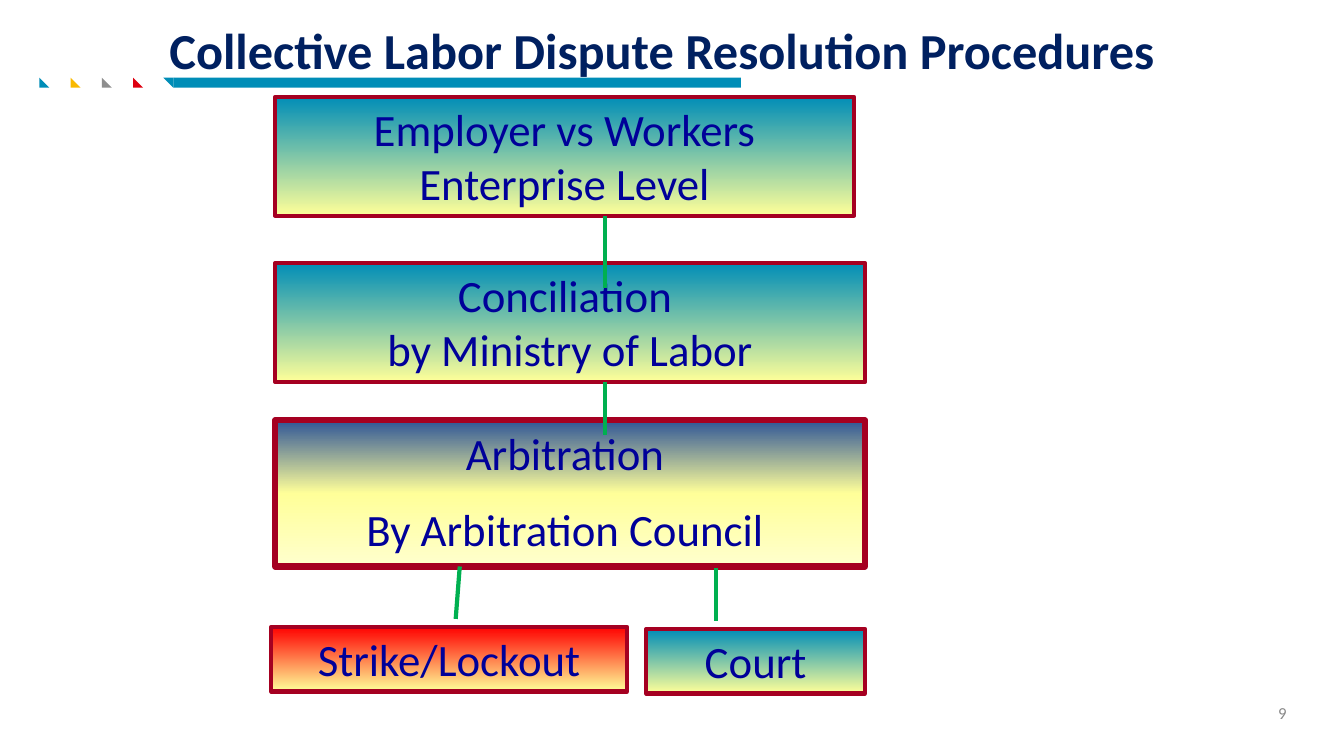
from copy import deepcopy

from lxml.etree import SubElement
from pptx import Presentation
from pptx.dml.color import RGBColor
from pptx.enum.shapes import MSO_CONNECTOR as Conn, MSO_SHAPE as Kind
from pptx.enum.text import MSO_ANCHOR as Anchor, MSO_AUTO_SIZE as Fit, PP_ALIGN as Align
from pptx.oxml.ns import qn
from pptx.util import Inches, Pt

TEAL = RGBColor(0x00, 0x8D, 0xB7)
GOLD = RGBColor(0xF9, 0xB9, 0x00)
GRAY = RGBColor(0x8E, 0x8E, 0x8E)
RED = RGBColor(0xDE, 0x00, 0x10)
NAVY = RGBColor(0x00, 0x20, 0x60)
PALE = RGBColor(0x89, 0x89, 0x89)
INK = RGBColor(0x00, 0x00, 0x99)
EDGE = RGBColor(0xA5, 0x00, 0x21)
GREEN = RGBColor(0x00, 0xB0, 0x50)
BLUE = RGBColor(0x2F, 0x55, 0x97)
LEMON = RGBColor(0xFF, 0xFF, 0x99)
CREAM = RGBColor(0xFF, 0xFF, 0xCD)
FLAME = RGBColor(0xFF, 0x00, 0x00)

FONT = "Calibri"
HEAD = {"name": FONT, "size": Pt(36), "bold": True}
BODY = {"name": FONT, "size": Pt(32)}
NOTE = {"name": FONT, "size": Pt(12)}


def apply(item, form):
    for key, value in form.items():
        setattr(item, key, value)


def write(frame, lines, form, color, align, gap=0):
    frame.text = "\n".join(lines)
    for i, para in enumerate(frame.paragraphs):
        apply(para, {"alignment": align, "space_before": Pt(gap if i else 0)})
        apply(para.font, form)
        para.font.color.rgb = color


def add_mark(slide, kind, left, width, color):
    mark = slide.shapes.add_shape(
        kind, Inches(left), Inches(0.77), Inches(width), Inches(0.1))
    mark.shadow.inherit = False
    mark.fill.solid()
    mark.fill.fore_color.rgb = color
    mark.line.fill.background()
    return mark


def add_line(slide, start, end, color, width):
    line = slide.shapes.add_connector(
        Conn.STRAIGHT, *(Inches(n) for n in (*start, *end)))
    line.line.color.rgb = color
    line.line.width = Pt(width)
    SubElement(line._element.spPr, qn("a:effectLst"))


def add_band(slide):
    for i, color in enumerate((TEAL, GOLD, GRAY, RED)):
        add_mark(slide, Kind.RIGHT_TRIANGLE, 0.39 + i * 0.31, 0.1, color)
    add_mark(slide, Kind.RECTANGLE, 1.72, 5.63, TEAL)
    add_mark(slide, Kind.RIGHT_TRIANGLE, 1.62, 0.1, TEAL).rotation = 180
    add_line(slide, (1.73, 0.77), (1.73, 0.86), TEAL, 0.5)


def shade(shape, colors):
    fill = shape.fill
    fill.gradient()
    fill.gradient_angle = 270
    stops = shape._element.spPr.find(".//" + qn("a:gsLst"))
    while len(stops) < len(colors):
        stops.append(deepcopy(stops[-1]))
    for i, (stop, color) in enumerate(zip(fill.gradient_stops, colors)):
        stop.position = i / (len(colors) - 1)
        stop.color.rgb = color


def add_step(slide, area, lines, colors=(TEAL, LEMON), edge=3, gap=0):
    step = slide.shapes.add_shape(Kind.RECTANGLE, *map(Inches, area))
    step.shadow.inherit = False
    shade(step, colors)
    step.line.color.rgb = EDGE
    step.line.width = Pt(edge)
    apply(step.text_frame, {"word_wrap": True, "vertical_anchor": Anchor.TOP,
                            "auto_size": Fit.SHAPE_TO_FIT_TEXT})
    write(step.text_frame, lines, BODY, INK, Align.CENTER, gap)


def add_title(slide, text):
    title = slide.shapes.title
    apply(title, {"left": Inches(1.58), "top": Inches(-0.14),
                  "width": Inches(10.35), "height": Inches(1.25)})
    apply(title.text_frame, {"word_wrap": True, "vertical_anchor": Anchor.MIDDLE,
                             "auto_size": Fit.NONE})
    write(title.text_frame, [text], HEAD, NAVY, Align.LEFT)


def add_page(slide, text):
    page = slide.shapes.add_textbox(
        Inches(10.53), Inches(6.87), Inches(2.33), Inches(0.4))
    apply(page.text_frame, {"word_wrap": True, "vertical_anchor": Anchor.MIDDLE})
    write(page.text_frame, [text], NOTE, PALE, Align.RIGHT)


def main():
    deck = Presentation()
    apply(deck, {"slide_width": Inches(13.33), "slide_height": Inches(7.5)})
    slide = deck.slides.add_slide(deck.slide_layouts[5])
    add_band(slide)
    add_title(slide, "Collective Labor Dispute Resolution Procedures")
    add_page(slide, "9")
    add_step(slide, (2.73, 4.17, 5.85, 1.45),
             ["Arbitration ", "By Arbitration Council "],
             (BLUE, LEMON, CREAM), 4.5, 16)
    add_step(slide, (2.73, 2.61, 5.85, 1.18),
             ["Conciliation ", "by Ministry of Labor"])
    add_step(slide, (2.73, 0.96, 5.74, 1.18),
             ["Employer vs Workers", "Enterprise Level"])
    add_step(slide, (6.41, 6.24, 2.17, 0.64), ["Court"])
    add_step(slide, (2.69, 6.22, 3.53, 0.64), ["Strike/Lockout"],
             (FLAME, LEMON))
    for start, end in (((6, 2.14), (6, 2.86)), ((6, 3.79), (6, 4.32)),
                       ((7.1, 5.64), (7.1, 6.16)), ((4.56, 5.62), (4.52, 6.14))):
        add_line(slide, start, end, GREEN, 3)
    deck.save("out.pptx")


if __name__ == "__main__":
    main()
